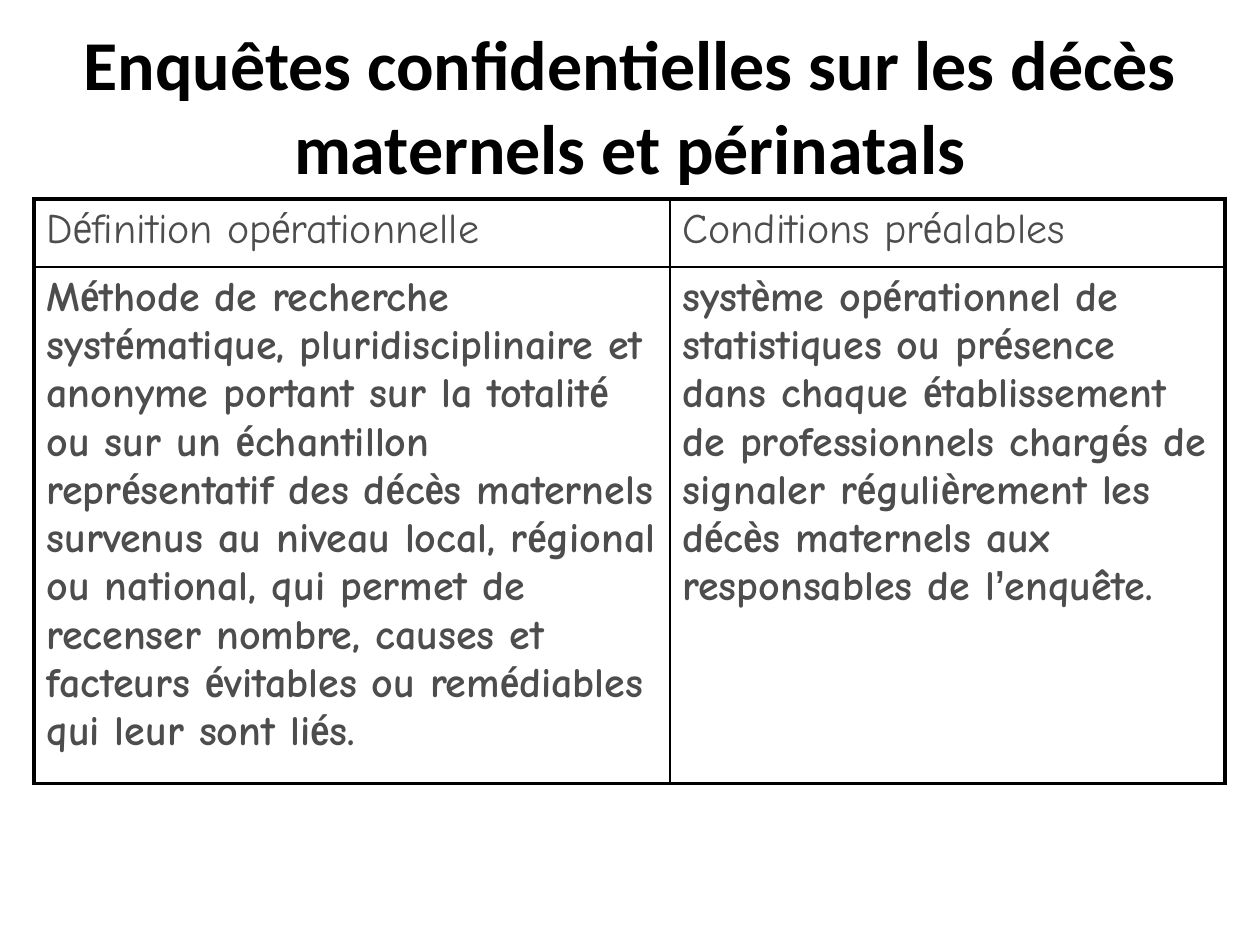
from itertools import groupby
from lxml.etree import SubElement
from pptx import Presentation
from pptx.dml.color import RGBColor
from pptx.enum.text import MSO_ANCHOR, PP_ALIGN
from pptx.oxml.ns import qn
from pptx.util import Pt

PX = 914400 // 126
COLORS = {"title": "000000", "border": "000000", "text": "4D4D4D"}
FONTS = {"title": "Calibri", "body": "Comic Neue", "accent": "Arial Narrow"}
ACCENTS = "éè’"
COLUMN_WIDTHS = [636, 555]
ROW_HEIGHTS = [68, 495]
ROWS = [
    ["Définition opérationnelle", "Conditions préalables"],
    [
        "Méthode de recherche systématique, pluridisciplinaire et anonyme portant sur la totalité "
        "ou sur un échantillon représentatif des décès maternels survenus au niveau local, régional "
        "ou national, qui permet de recenser nombre, causes et facteurs évitables ou remédiables "
        "qui leur sont liés.",
        "système opérationnel de statistiques ou présence dans chaque établissement de professionnels "
        "chargés de signaler régulièrement les décès maternels aux responsables de l’enquête.",
    ],
]


def add_run(paragraph, text, color, **formats):
    run = paragraph.add_run()
    run.text = text
    run.font.color.rgb = RGBColor.from_string(COLORS[color])
    for name, value in formats.items():
        setattr(run.font, name, value)


def add_border(cell, side, width):
    line = SubElement(cell._tc.get_or_add_tcPr(), qn(f"a:ln{side}"), w=str(Pt(width)))
    fill = SubElement(line, qn("a:solidFill"))
    SubElement(fill, qn("a:srgbClr"), val=COLORS["border"])


presentation = Presentation()
presentation.slide_width = 1260 * PX
presentation.slide_height = 945 * PX
slide = presentation.slides.add_slide(presentation.slide_layouts[6])

title = slide.shapes.add_textbox(63 * PX, 32 * PX, 1134 * PX, 136 * PX)
frame_formats = {"word_wrap": True, "vertical_anchor": MSO_ANCHOR.MIDDLE, "margin_top": 16 * PX}
for name, value in frame_formats.items():
    setattr(title.text_frame, name, value)
paragraph = title.text_frame.paragraphs[0]
paragraph.alignment = PP_ALIGN.CENTER
add_run(paragraph, "Enquêtes confidentielles sur les décès maternels et périnatals", "title",
        name=FONTS["title"], size=Pt(40), bold=True)

table = slide.shapes.add_table(
    2, 2, 34 * PX, 199 * PX, sum(COLUMN_WIDTHS) * PX, sum(ROW_HEIGHTS) * PX
).table
table.first_row = table.horz_banding = False
for column, width in zip(table.columns, COLUMN_WIDTHS):
    column.width = width * PX
for row, height in zip(table.rows, ROW_HEIGHTS):
    row.height = height * PX

for row_index, texts in enumerate(ROWS):
    for column_index, text in enumerate(texts):
        cell = table.cell(row_index, column_index)
        paragraph = cell.text_frame.paragraphs[0]
        for accented, letters in groupby(text, lambda letter: letter in ACCENTS):
            add_run(paragraph, "".join(letters), "text", size=Pt(24), bold=row_index == 1,
                    name=FONTS["accent" if accented else "body"])
        outer_sides = {"L": column_index == 0, "R": column_index == 1,
                       "T": row_index == 0, "B": row_index == 1}
        for side, outer in outer_sides.items():
            add_border(cell, side, 2.25 if outer else 1)
        cell.fill.background()

presentation.save("out.pptx")
